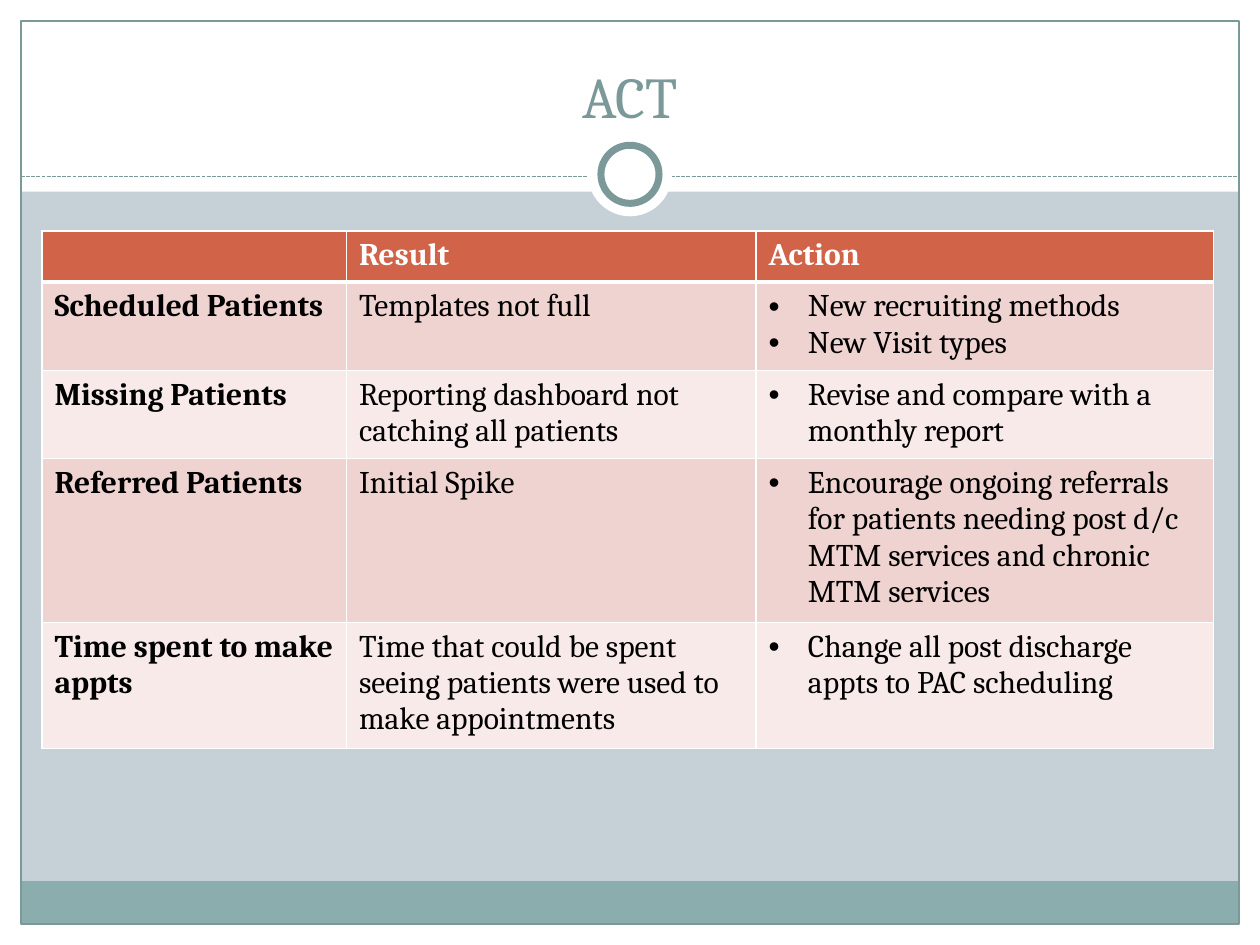
from lxml import etree
from pptx import Presentation
from pptx.dml.color import RGBColor
from pptx.enum import dml, shapes, text
from pptx.oxml import ns
from pptx.util import Pt

COLORS = {
    "background": "C5D1D7",
    "white": "FFFFFF",
    "black": "000000",
    "footer": "8CADAE",
    "accent": "7C999A",
    "header": "D16349",
    "odd": "EED3D0",
    "even": "F7EAE9",
}
FONT = "Cambria"
WIDTH, HEIGHT = 720, 540
COLUMN_WIDTHS = [174, 234, 261.5]
ROW_HEIGHT = 29.2
HEADINGS = ["", "Result", "Action"]
FINDINGS = [
    ("Scheduled Patients", "Templates not full",
     ["New recruiting methods", "New Visit types"]),
    ("Missing Patients", "Reporting dashboard not catching all patients",
     ["Revise and compare with a monthly report"]),
    ("Referred Patients", "Initial Spike",
     ["Encourage ongoing referrals for patients needing post d/c MTM services "
      "and chronic MTM services"]),
    ("Time spent to make appts",
     "Time that could be spent seeing patients were used to make appointments",
     ["Change all post discharge appts to PAC scheduling"]),
]


def rgb(name):
    return RGBColor.from_string(COLORS[name])


def add_panel(slide, box, fill=None, line=None, weight=0.75,
              kind=shapes.MSO_SHAPE.RECTANGLE):
    panel = slide.shapes.add_shape(kind, *map(Pt, box))
    panel.shadow.inherit = False
    if fill:
        panel.fill.solid()
        panel.fill.fore_color.rgb = rgb(fill)
    else:
        panel.fill.background()
    if line:
        panel.line.color.rgb = rgb(line)
        panel.line.width = Pt(weight)
    else:
        panel.line.fill.background()


def add_run(paragraph, words, size, color, bold=False):
    run = paragraph.add_run()
    run.text = words
    run.font.name = FONT
    run.font.size = Pt(size)
    run.font.bold = bold
    run.font.color.rgb = rgb(color)


def add_frame(slide, box, margin=12, banner=109.5, footer=24.5):
    left, top, width, height = box
    right, bottom = left + width, top + height
    inner = width - 2 * margin
    for edge in [
        (left, bottom - margin, width, margin),
        (left, top, width, banner),
        (left, top, margin, height),
        (right - margin, top, margin, height),
    ]:
        add_panel(slide, edge, "white")
    add_panel(slide, (left + margin, bottom - margin - footer, inner, footer), "footer")
    add_panel(slide, (left + margin, top + margin, inner, height - 2 * margin),
              line="accent")


def add_divider(slide, box):
    left, top, width, height = box
    y = top + 25.2
    rule = slide.shapes.add_connector(
        shapes.MSO_CONNECTOR.STRAIGHT, Pt(left), Pt(y), Pt(left + width), Pt(y))
    rule.line.color.rgb = rgb("accent")
    rule.line.width = Pt(0.75)
    rule.line.dash_style = dml.MSO_LINE.SQUARE_DOT
    properties = rule._element.spPr
    etree.SubElement(properties, ns.qn("a:effectLst"))
    for diameter, line in [(height, None), (33.2, "accent")]:
        ring = (left + (width - diameter) / 2, top + (height - diameter) / 2,
                diameter, diameter)
        add_panel(slide, ring, "white", line, 4, shapes.MSO_SHAPE.OVAL)


def add_title(slide, box):
    title = slide.shapes.add_textbox(*map(Pt, box)).text_frame
    title.word_wrap = True
    title.vertical_anchor = text.MSO_ANCHOR.BOTTOM
    paragraph = title.paragraphs[0]
    paragraph.alignment = text.PP_ALIGN.CENTER
    add_run(paragraph, "ACT", 33, "accent")


def set_borders(cell, bottom_weight):
    properties = cell._tc.get_or_add_tcPr()
    weights = {"lnL": 1, "lnR": 1, "lnT": 1, "lnB": bottom_weight}
    for position, (side, weight) in enumerate(weights.items()):
        border = etree.Element(ns.qn(f"a:{side}"), w=str(Pt(weight)))
        fill = etree.SubElement(border, ns.qn("a:solidFill"))
        etree.SubElement(fill, ns.qn("a:srgbClr"), val=COLORS["white"])
        properties.insert(position, border)


def set_bullet(paragraph):
    properties = paragraph._p.get_or_add_pPr()
    properties.set("marL", str(Pt(22.5)))
    properties.set("indent", str(Pt(-22.5)))
    etree.SubElement(properties, ns.qn("a:buFont"), typeface="Arial")
    etree.SubElement(properties, ns.qn("a:buChar"), char="•")


def fill_cell(cell, lines, fill, color, bold, bulleted, bottom_weight):
    cell.fill.solid()
    cell.fill.fore_color.rgb = rgb(fill)
    set_borders(cell, bottom_weight)
    for index, line in enumerate(lines):
        frame = cell.text_frame
        paragraph = frame.add_paragraph() if index else frame.paragraphs[0]
        if bulleted:
            set_bullet(paragraph)
        if line:
            add_run(paragraph, line, 18, color, bold)


def add_findings(slide, box):
    holder = slide.shapes.add_table(
        len(FINDINGS) + 1, len(HEADINGS), *map(Pt, box))
    table = holder.table
    for column, width in zip(table.columns, COLUMN_WIDTHS):
        column.width = Pt(width)
    for row in table.rows:
        row.height = Pt(ROW_HEIGHT)
    holder.height = Pt(box[3])
    for column, heading in enumerate(HEADINGS):
        fill_cell(table.cell(0, column), [heading], "header", "white", True, False, 3)
    for row, (measure, result, actions) in enumerate(FINDINGS, start=1):
        fill = "odd" if row % 2 else "even"
        for column, lines in enumerate([[measure], [result], actions]):
            fill_cell(table.cell(row, column), lines, fill, "black",
                      column == 0, column == 2, 1)


def main():
    deck = Presentation()
    deck.slide_width, deck.slide_height = Pt(WIDTH), Pt(HEIGHT)
    slide = deck.slides.add_slide(deck.slide_layouts[6])
    slide.background.fill.solid()
    slide.background.fill.fore_color.rgb = rgb("background")
    add_frame(slide, (0, 0, WIDTH, HEIGHT))
    add_divider(slide, (12, 75.6, WIDTH - 24, 48))
    add_title(slide, (24, 18, WIDTH - 48, 60))
    add_findings(slide, (24, 132, sum(COLUMN_WIDTHS), 317.5))
    deck.save("out.pptx")


if __name__ == "__main__":
    main()
